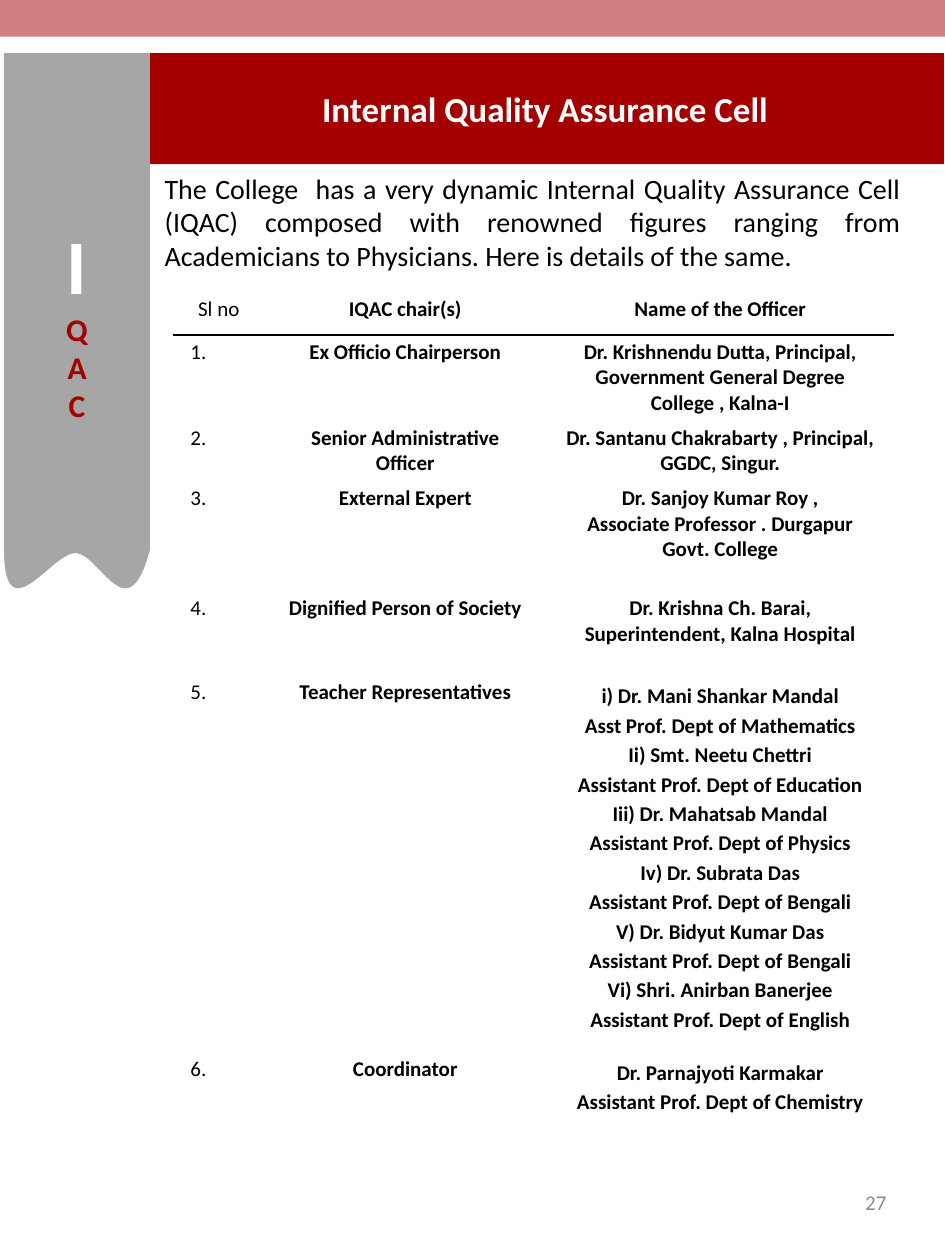
"""Builds the Internal Quality Assurance Cell page of a college report."""
from lxml.etree import SubElement
from pptx import Presentation
from pptx.dml.color import RGBColor
from pptx.enum.shapes import MSO_SHAPE as Shape
from pptx.enum.text import MSO_ANCHOR as Anchor, MSO_AUTO_SIZE as AutoSize, PP_ALIGN as Align
from pptx.oxml import parse_xml
from pptx.oxml.ns import nsdecls, qn
from pptx.util import Cm, Pt

RED, GREY, WHITE, BLACK = "A40000", "A6A6A6", "FFFFFF", "000000"

INTRO = (
    "The College  has a very dynamic Internal Quality Assurance Cell (IQAC) composed with "
    "renowned figures ranging from Academicians to Physicians. Here is details of the same."
)
HEADINGS = ("Sl no", "IQAC chair(s)", "Name of the Officer")
OFFICERS = [
    ("Ex Officio Chairperson",
     ["Dr. Krishnendu Dutta, Principal, Government General Degree College , Kalna-I"], 1),
    ("Senior Administrative Officer",
     ["Dr. Santanu Chakrabarty , Principal, GGDC, Singur."], 1),
    ("External Expert",
     ["Dr. Sanjoy Kumar Roy ,", "Associate Professor . Durgapur Govt. College"], 1),
    ("Dignified Person of Society",
     ["Dr. Krishna Ch. Barai, Superintendent, Kalna Hospital"], 1),
    ("Teacher Representatives",
     ["i) Dr. Mani Shankar Mandal", "Asst Prof. Dept of Mathematics",
      "Ii) Smt. Neetu Chettri", "Assistant Prof. Dept of Education",
      "Iii) Dr. Mahatsab Mandal", "Assistant Prof. Dept of Physics",
      "Iv) Dr. Subrata Das", "Assistant Prof. Dept of Bengali",
      "V) Dr. Bidyut Kumar Das", "Assistant Prof. Dept of Bengali",
      "Vi) Shri. Anirban Banerjee", "Assistant Prof. Dept of English"], 1.15),
    ("Coordinator",
     ["Dr. Parnajyoti Karmakar", "Assistant Prof. Dept of Chemistry"], 1.15),
]
COLUMN_WIDTHS = (1.8, 5.72, 6.98)
ROW_HEIGHTS = (0.86, 1.7, 1.22, 2.22, 1.7, 7.59, 1.9)


def color(value):
    return RGBColor.from_string(value)


def bezier(start, first, second, end, steps=24):
    """Return points along a cubic curve, without its start."""
    points = []
    for step in range(1, steps + 1):
        t = step / steps
        weights = ((1 - t) ** 3, 3 * t * (1 - t) ** 2, 3 * t * t * (1 - t), t ** 3)
        corners = (start, first, second, end)
        points.append(tuple(sum(w * c[axis] for w, c in zip(weights, corners)) for axis in (0, 1)))
    return points


class Page:
    """Holds the style and the current slide."""

    font = "Calibri"
    cell_format = {"margin_left": Cm(0.33), "margin_right": Cm(0.33),
                   "margin_top": Cm(0.09), "margin_bottom": Cm(0.09)}

    def __init__(self, deck):
        self.slide = deck.slides.add_slide(deck.slide_layouts[5])

    def apply(self, target, values):
        for name, value in values.items():
            setattr(target, name, value)

    def place(self, shape, left, top, width, height):
        sides = zip(("left", "top", "width", "height"), (left, top, width, height))
        self.apply(shape, {name: Cm(value) for name, value in sides})

    def paint(self, shape, fill):
        shape.fill.solid()
        shape.fill.fore_color.rgb = color(fill)
        shape.line.fill.background()

    def add_spans(self, para, spans, align, spacing=1):
        self.apply(para, {"alignment": align, "line_spacing": spacing})
        for text, size, ink, bold in spans:
            span = para.add_run()
            span.text = text
            self.apply(span.font, {"name": self.font, "size": Pt(size), "bold": bold})
            span.font.color.rgb = color(ink)

    def frame(self, shape, anchor):
        self.apply(shape.text_frame, {"word_wrap": True, "auto_size": AutoSize.NONE,
                                      "vertical_anchor": anchor})
        return shape.text_frame.paragraphs[0]

    def title(self, text, *area):
        title = self.slide.shapes.title
        self.place(title, *area)
        self.paint(title, RED)
        self.add_spans(self.frame(title, Anchor.MIDDLE), [(text, 20, WHITE, True)], Align.CENTER)

    def strip(self, fill, opacity, *area):
        strip = self.slide.shapes.add_shape(Shape.RECTANGLE, *map(Cm, area))
        strip.shadow.inherit = False
        self.paint(strip, fill)
        tint = strip.fill._xPr.find(".//" + qn("a:srgbClr"))
        SubElement(tint, qn("a:alpha"), val=str(opacity * 1000))

    def ribbon(self, left, top, right, bottom, spans):
        middle = (1.52, 11.15)
        points = [(right, top), (right, bottom)]
        points += bezier((right, bottom), (2.57, 12.78), (2.01, 11.15), middle)
        points += bezier(middle, (1.04, 11.15), (0.1, 12.78), (left, bottom))
        builder = self.slide.shapes.build_freeform(Cm(left), Cm(top))
        builder.add_line_segments([(Cm(x), Cm(y)) for x, y in points], close=True)
        ribbon = builder.convert_to_shape()
        ribbon.shadow.inherit = False
        self.paint(ribbon, GREY)
        self.add_spans(self.frame(ribbon, Anchor.MIDDLE), spans, Align.CENTER)
        ribbon.text_frame._txBody.bodyPr.set("vert", "wordArtVert")

    def text(self, text, size, ink, align, anchor, *area):
        box = self.slide.shapes.add_textbox(*map(Cm, area))
        self.add_spans(self.frame(box, anchor), [(text, size, ink, False)], align)

    def border(self, cell, side):
        cell._tc.get_or_add_tcPr().insert(0, parse_xml(
            f'<a:{side} {nsdecls("a")} w="12700"><a:solidFill>'
            f'<a:srgbClr val="{BLACK}"/></a:solidFill></a:{side}>'))

    def cell(self, cell, lines, bold, align, spacing=1):
        cell.fill.background()
        self.apply(cell, self.cell_format)
        for index, line in enumerate(lines):
            para = cell.text_frame.paragraphs[0] if index == 0 else cell.text_frame.add_paragraph()
            self.add_spans(para, [(line, 12, BLACK, bold)], align, spacing)

    def table(self, left, top):
        area = (left, top, sum(COLUMN_WIDTHS), sum(ROW_HEIGHTS))
        table = self.slide.shapes.add_table(
            len(ROW_HEIGHTS), len(COLUMN_WIDTHS), *map(Cm, area)).table
        self.apply(table, {"first_row": False, "horz_banding": False})
        for column, width in zip(table.columns, COLUMN_WIDTHS):
            column.width = Cm(width)
        for row, height in zip(table.rows, ROW_HEIGHTS):
            row.height = Cm(height)
        for index, heading in enumerate(HEADINGS):
            self.cell(table.cell(0, index), [heading], index > 0, Align.CENTER)
            self.border(table.cell(0, index), "lnB")
        for number, (chair, names, spacing) in enumerate(OFFICERS, 1):
            self.cell(table.cell(number, 0), [f"{number}."], False, Align.LEFT)
            self.cell(table.cell(number, 1), [chair], True, Align.CENTER)
            self.cell(table.cell(number, 2), names, True, Align.CENTER, spacing)
        for index in range(len(HEADINGS)):
            self.border(table.cell(1, index), "lnT")


def main():
    deck = Presentation()
    deck.slide_width, deck.slide_height = Cm(19.05), Cm(25.4)
    page = Page(deck)
    page.strip(RED, 50, -0.05, -0.05, 19.1, 0.79)
    page.title("Internal Quality Assurance Cell", 2.95, 1.07, 16.08, 2.24)
    page.ribbon(0.08, 1.07, 3.02, 11.1, [("I", 44, WHITE, True), ("QAC", 18, RED, True)])
    page.text("27", 12, "8C8C8C", Align.RIGHT, Anchor.MIDDLE, 13.67, 23.55, 4.45, 1.35)
    page.text(INTRO, 16, BLACK, Align.JUSTIFY, Anchor.TOP, 3.07, 3.33, 15.34, 2.31)
    page.table(3.51, 5.89)
    deck.save("out.pptx")


if __name__ == "__main__":
    main()
